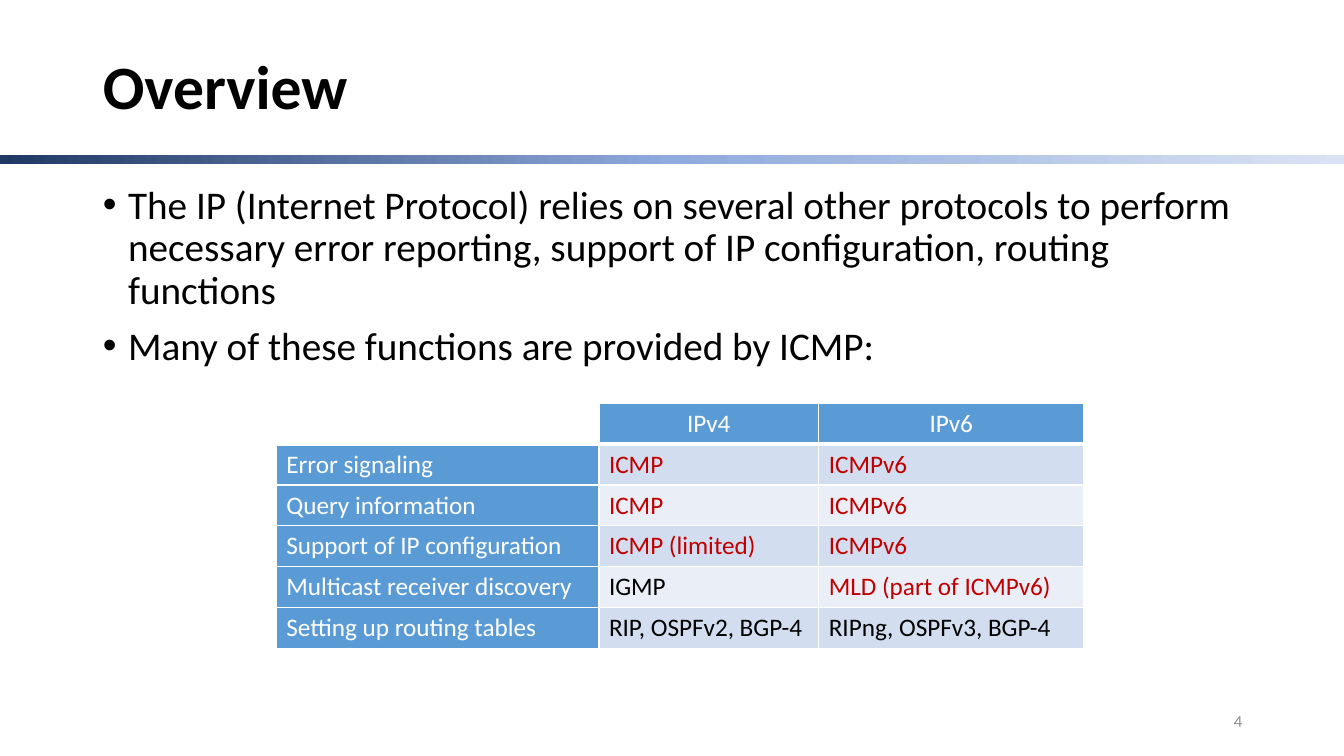
from copy import deepcopy
from pptx import Presentation
from pptx.dml.color import RGBColor
from pptx.enum.shapes import MSO_SHAPE
from pptx.enum.text import MSO_ANCHOR, PP_ALIGN
from pptx.oxml import parse_xml
from pptx.oxml.ns import nsdecls, qn
from pptx.util import Inches, Pt

RECT = MSO_SHAPE.RECTANGLE
MIDDLE = MSO_ANCHOR.MIDDLE
LEFT, CENTER, RIGHT = PP_ALIGN.LEFT, PP_ALIGN.CENTER, PP_ALIGN.RIGHT

BLACK, WHITE, RED, GRAY = "000000", "FFFFFF", "C00000", "8C8C8C"
BLUE = "5B9BD5"
BANDS = ["D2DEEF", "EAEFF7"]
FADE = [(0, "203864"), (0.5, "8FAADC"), (1, "DAE3F3")]

BULLETS = [
    "The IP (Internet Protocol) relies on several other protocols to perform "
    "necessary error reporting, support of IP configuration, routing functions",
    "Many of these functions are provided by ICMP:",
]
ROWS = [
    ("", "IPv4", "IPv6"),
    ("Error signaling", "ICMP", "ICMPv6"),
    ("Query information", "ICMP", "ICMPv6"),
    ("Support of IP configuration", "ICMP (limited)", "ICMPv6"),
    ("Multicast receiver discovery", "IGMP", "MLD (part of ICMPv6)"),
    ("Setting up routing tables", "RIP, OSPFv2, BGP-4", "RIPng, OSPFv3, BGP-4"),
]
WIDTHS = [3.2, 2.18, 2.63]
HEIGHT = 0.405


def style(para, size, color, align=LEFT, bold=False):
    para.alignment = align
    for run in para.runs:
        font = run.font
        font.name, font.size, font.bold = "Calibri", Pt(size), bold
        font.color.rgb = RGBColor.from_string(color)


def place(shape, left, top, width, height):
    shape.left, shape.top = Inches(left), Inches(top)
    shape.width, shape.height = Inches(width), Inches(height)


prs = Presentation()
prs.slide_width, prs.slide_height = Inches(13.33), Inches(7.5)
slide = prs.slides.add_slide(prs.slide_layouts[1])
shapes = slide.shapes

# Gradient bar
bar = shapes.add_shape(RECT, 0, Inches(1.54), prs.slide_width, Inches(0.09))
bar.shadow.inherit = False
bar.line.fill.background()
bar.fill.gradient()
bar.fill.gradient_angle = 0
stops = bar.fill._xPr.find(".//" + qn("a:gsLst"))
stops.insert(1, deepcopy(stops[0]))
for stop, (pos, color) in zip(bar.fill.gradient_stops, FADE):
    stop.position = pos
    stop.color.rgb = RGBColor.from_string(color)

# Title
title = shapes.title
place(title, 0.92, 0.4, 11.5, 0.97)
title.text_frame.text = "Overview"
title.text_frame.vertical_anchor = MIDDLE
head = title.text_frame.paragraphs[0]
head.line_spacing = 0.9
style(head, 44, BLACK, bold=True)

# Bullets
body = slide.placeholders[1]
place(body, 0.92, 1.79, 11.5, 4.97)
body.text_frame.text = "\n".join(BULLETS)
for para in body.text_frame.paragraphs:
    style(para, 28, BLACK)
    para.line_spacing, para.space_before = 0.9, Pt(10)
    props = para._p.get_or_add_pPr()
    props.set("marL", str(Inches(0.25)))
    props.set("indent", str(-Inches(0.25)))
    props.append(parse_xml(f'<a:buFont {nsdecls("a")} typeface="Arial"/>'))
    props.append(parse_xml(f'<a:buChar {nsdecls("a")} char="•"/>'))

# Protocol table
table = shapes.add_table(len(ROWS), len(WIDTHS), Inches(2.74), Inches(4),
                         Inches(sum(WIDTHS)), Inches(HEIGHT * len(ROWS))).table
table.first_row = table.horz_banding = False
for col, width in zip(table.columns, WIDTHS):
    col.width = Inches(width)
for r, row in enumerate(ROWS):
    table.rows[r].height = Inches(HEIGHT)
    for c, text in enumerate(row):
        cell = table.cell(r, c)
        cell.text_frame.text = text
        label = r == 0 or c == 0
        color = WHITE if label else RED if "ICMP" in text else BLACK
        style(cell.text_frame.paragraphs[0], 18, color, LEFT if r else CENTER)
        if text:
            cell.fill.solid()
            fill = BLUE if label else BANDS[(r - 1) % 2]
            cell.fill.fore_color.rgb = RGBColor.from_string(fill)
        else:
            cell.fill.background()
        thick = {0: "lnB", 1: "lnT"}.get(r)
        for i, side in enumerate(["lnL", "lnR", "lnT", "lnB"]):
            width = Pt(3 if side == thick else 1)
            cell._tc.get_or_add_tcPr().insert(i, parse_xml(
                f'<a:{side} {nsdecls("a")} w="{width}"><a:solidFill>'
                f'<a:srgbClr val="{WHITE}"/></a:solidFill></a:{side}>'))

# Slide number
num = shapes.add_textbox(Inches(9.42), Inches(6.95), Inches(3), Inches(0.4))
num.text_frame.text = "4"
num.text_frame.word_wrap = True
num.text_frame.vertical_anchor = MIDDLE
style(num.text_frame.paragraphs[0], 12, GRAY, RIGHT)

prs.save("out.pptx")
